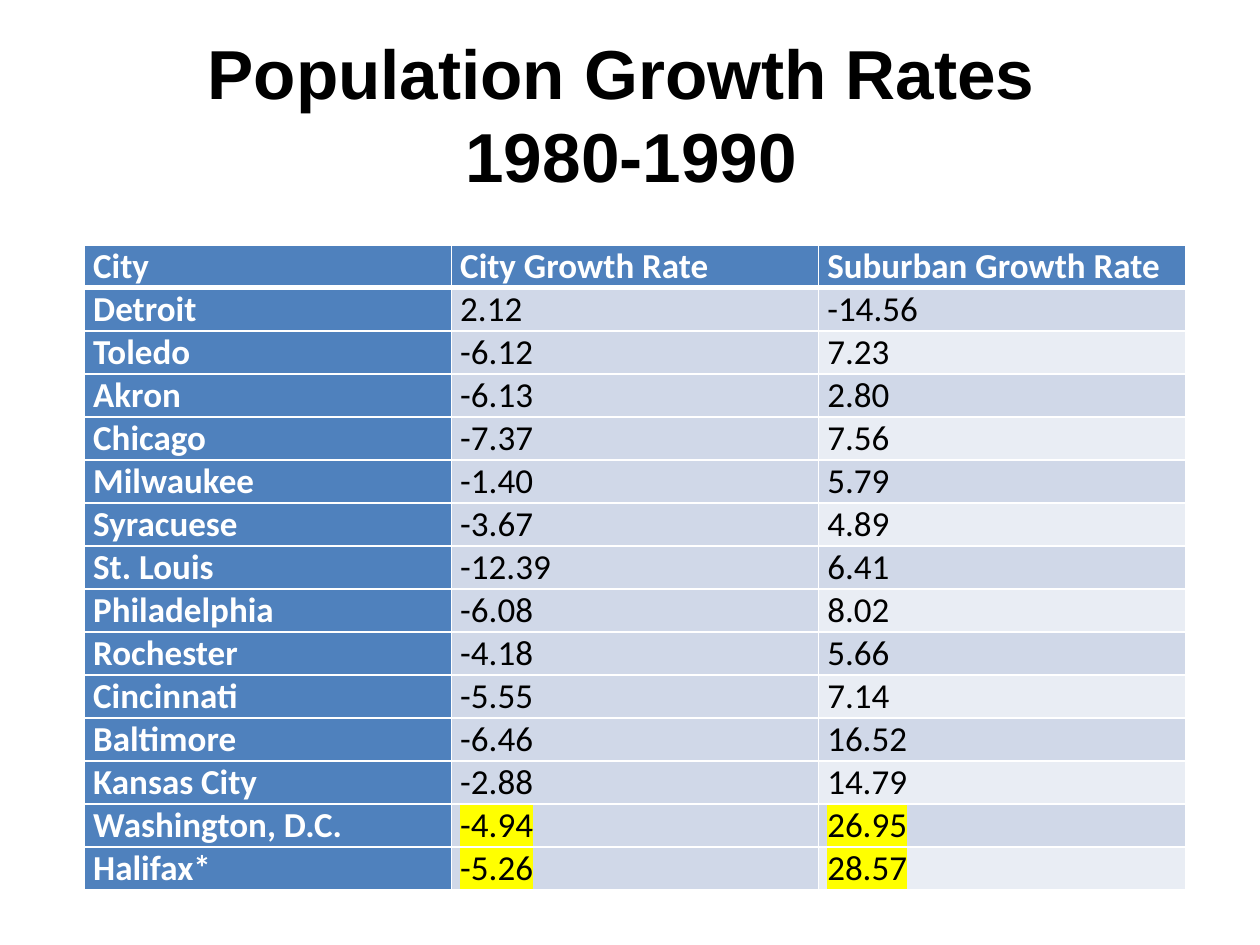
from dataclasses import dataclass
from typing import NamedTuple

from lxml import etree
from pptx import Presentation
from pptx import util as u
from pptx.dml.color import RGBColor
from pptx.enum import text
from pptx.oxml.ns import qn


@dataclass(frozen=True)
class Theme:
    title_font: str = "Arial"
    table_font: str = "Calibri"
    title_size: float = 39.6
    table_size: float = 20
    dark: str = "000000"
    light: str = "FFFFFF"
    accent: str = "4F81BD"
    band: str = "D0D8E8"
    alternate_band: str = "E9EDF4"
    highlight: str = "FFFF00"
    rule: float = 1
    header_rule: float = 3


class City(NamedTuple):
    name: str
    city_rate: str
    suburban_rate: str
    highlighted: bool = False


THEME = Theme()
WIDTH, HEIGHT = u.Inches(10), u.Inches(7.5)
TITLE = "Population Growth Rates \v1980-1990"
HEADINGS = City("City", "City Growth Rate", "Suburban Growth Rate")
CITIES = [
    City("Detroit", "2.12", "-14.56"),
    City("Toledo", "-6.12", "7.23"),
    City("Akron", "-6.13", "2.80"),
    City("Chicago", "-7.37", "7.56"),
    City("Milwaukee", "-1.40", "5.79"),
    City("Syracuese", "-3.67", "4.89"),
    City("St. Louis", "-12.39", "6.41"),
    City("Philadelphia", "-6.08", "8.02"),
    City("Rochester", "-4.18", "5.66"),
    City("Cincinnati", "-5.55", "7.14"),
    City("Baltimore", "-6.46", "16.52"),
    City("Kansas City", "-2.88", "14.79"),
    City("Washington, D.C.", "-4.94", "26.95", True),
    City("Halifax*", "-5.26", "28.57", True),
]


def format_runs(paragraph, font: str, size: float, color: str, bold: bool) -> None:
    for run in paragraph.runs:
        run.font.name = font
        run.font.size = u.Pt(size)
        run.font.bold = bold
        run.font.color.rgb = RGBColor.from_string(color)


def highlight_run(run) -> None:
    properties = run.font._element
    mark = etree.Element(qn("a:highlight"))
    etree.SubElement(mark, qn("a:srgbClr"), val=THEME.highlight)
    properties.find(qn("a:solidFill")).addnext(mark)


def set_borders(cell, top: float, bottom: float) -> None:
    properties = cell._tc.get_or_add_tcPr()
    widths = {"lnL": THEME.rule, "lnR": THEME.rule, "lnT": top, "lnB": bottom}
    for index, (side, width) in enumerate(widths.items()):
        line = etree.Element(qn(f"a:{side}"), w=str(u.Pt(width)))
        fill = etree.SubElement(line, qn("a:solidFill"))
        etree.SubElement(fill, qn("a:srgbClr"), val=THEME.light)
        properties.insert(index, line)


def cell_fill(row: int, column: int) -> str:
    if row == 0 or column == 0:
        return THEME.accent
    return THEME.alternate_band if column == 2 and row % 2 == 0 else THEME.band


def draw_cell(cell, row: int, column: int, content: str, highlighted: bool) -> None:
    heading = row == 0 or column == 0
    cell.margin_left = cell.margin_right = u.Inches(0.07)
    cell.margin_top = cell.margin_bottom = 0
    cell.fill.solid()
    cell.fill.fore_color.rgb = RGBColor.from_string(cell_fill(row, column))
    set_borders(cell,
                top=THEME.header_rule if row == 1 else THEME.rule,
                bottom=THEME.header_rule if row == 0 else THEME.rule)
    cell.text_frame.text = content
    paragraph = cell.text_frame.paragraphs[0]
    format_runs(paragraph, THEME.table_font, THEME.table_size,
                THEME.light if heading else THEME.dark, heading)
    if highlighted and not heading:
        highlight_run(paragraph.runs[0])


def draw_table(slide, records: list[City]) -> None:
    frame = slide.shapes.add_table(
        len(records), 3, int(WIDTH * 0.067), int(HEIGHT * 0.259),
        int(WIDTH * 0.874), int(HEIGHT * 0.683))
    frame.table.first_col = True
    for row, record in enumerate(records):
        for column, content in enumerate(record[:3]):
            draw_cell(frame.table.cell(row, column), row, column, content,
                      record.highlighted)


def draw_title(slide) -> None:
    title = slide.shapes.title
    title.left, title.top = int(WIDTH * 0.051), int(HEIGHT * 0.08)
    title.width, title.height = int(WIDTH * 0.9), u.Inches(1.25)
    frame = title.text_frame
    frame.text = TITLE
    frame.word_wrap = True
    frame.auto_size = text.MSO_AUTO_SIZE.NONE
    frame.vertical_anchor = text.MSO_ANCHOR.MIDDLE
    frame.margin_bottom = u.Inches(0.7)  # lifts the two lines clear of the table
    paragraph = frame.paragraphs[0]
    paragraph.alignment = text.PP_ALIGN.CENTER
    format_runs(paragraph, THEME.title_font, THEME.title_size, THEME.dark, True)


def main() -> None:
    presentation = Presentation()
    presentation.slide_width, presentation.slide_height = WIDTH, HEIGHT
    slide = presentation.slides.add_slide(presentation.slide_layouts[5])
    draw_title(slide)
    draw_table(slide, [HEADINGS, *CITIES])
    presentation.save("out.pptx")


if __name__ == "__main__":
    main()
